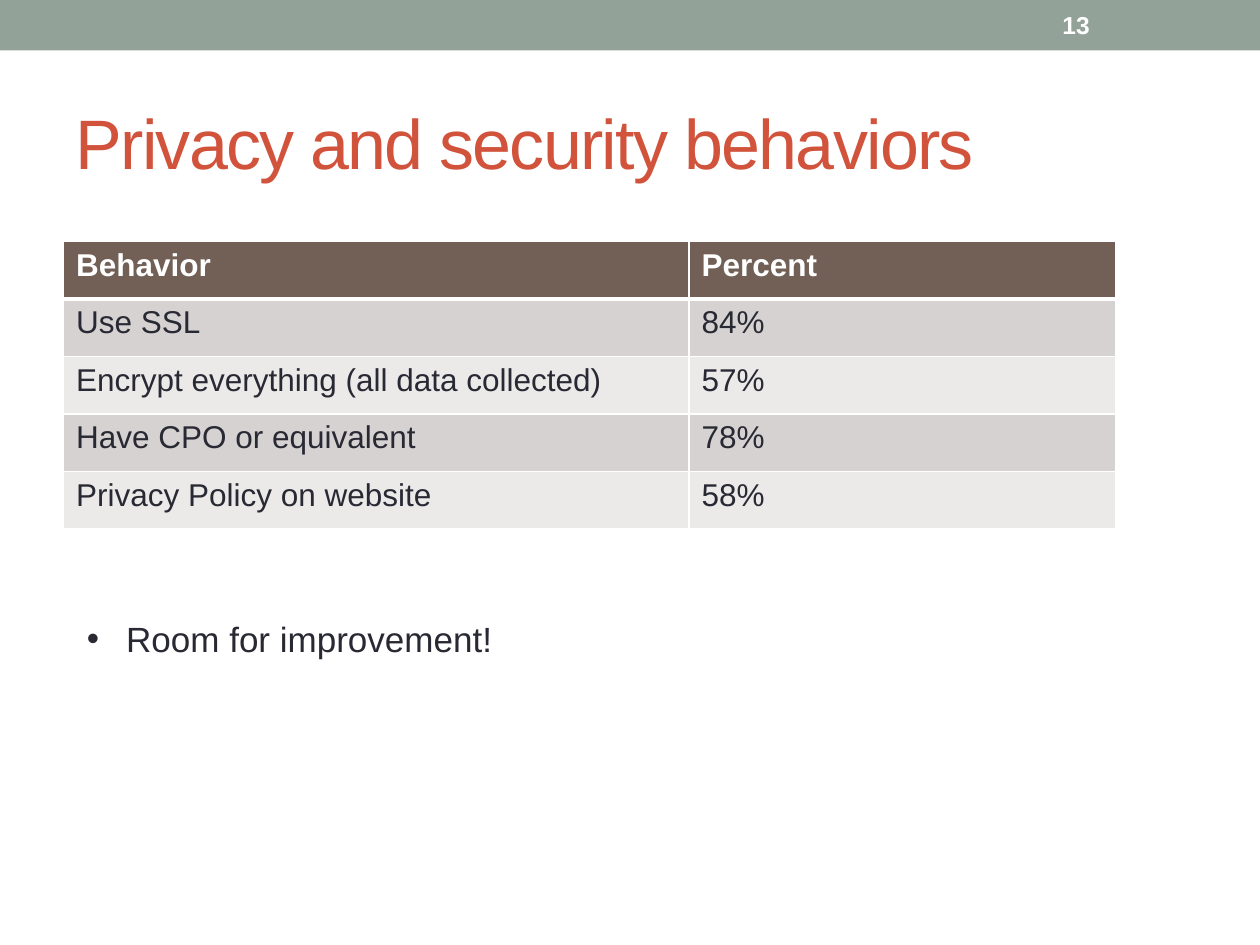
from pptx import Presentation
from pptx.dml.color import RGBColor
from pptx.enum.shapes import MSO_SHAPE
from pptx.enum.text import MSO_ANCHOR, MSO_AUTO_SIZE, PP_ALIGN
from pptx.oxml.ns import qn
from pptx.util import Pt
from lxml.etree import SubElement

SAGE = RGBColor(0x93, 0xA2, 0x99)
RED = RGBColor(0xD2, 0x53, 0x3C)
BROWN = RGBColor(0x72, 0x60, 0x56)
INK = RGBColor(0x29, 0x29, 0x34)
WHITE = RGBColor(0xFF, 0xFF, 0xFF)
BANDS = [RGBColor(0xD5, 0xD2, 0xD1), RGBColor(0xEB, 0xEA, 0xE9)]


class SlideBuilder:
    font = "Arial"

    def __init__(self, prs):
        self.s = prs.slides.add_slide(prs.slide_layouts[5])

    def run(self, p, text, size, color, bold=False):
        r = p.add_run()
        r.text = text
        r.font.name, r.font.size, r.font.bold = self.font, Pt(size), bold
        r.font.color.rgb = color
        return r

    def bar(self, x, y, w, h, color):
        sp = self.s.shapes.add_shape(MSO_SHAPE.RECTANGLE, Pt(x), Pt(y), Pt(w), Pt(h))
        sp.shadow.inherit = False
        sp.fill.solid()
        sp.fill.fore_color.rgb = color
        sp.line.fill.background()

    def title(self, text, x, y, w, h):
        sp = self.s.shapes.title
        sp.left, sp.top, sp.width, sp.height = Pt(x), Pt(y), Pt(w), Pt(h)
        tf = sp.text_frame
        tf.auto_size = MSO_AUTO_SIZE.NONE
        tf.vertical_anchor = MSO_ANCHOR.MIDDLE
        p = tf.paragraphs[0]
        p.alignment = PP_ALIGN.LEFT
        r = self.run(p, text, 40, RED)
        r.font._element.set("spc", "-100")

    def text(self, text, x, y, w, h, size, color, bold=False,
             anchor=MSO_ANCHOR.TOP, indent=0):
        tf = self.s.shapes.add_textbox(Pt(x), Pt(y), Pt(w), Pt(h)).text_frame
        tf.word_wrap = True
        tf.vertical_anchor = anchor
        p = tf.paragraphs[0]
        if indent:
            pPr = p._p.get_or_add_pPr()
            pPr.set("marL", str(Pt(indent)))
            pPr.set("indent", str(-Pt(indent)))
            SubElement(pPr, qn("a:buFont"), typeface=self.font)
            SubElement(pPr, qn("a:buChar"), char="•")
        self.run(p, text, size, color, bold)

    def borders(self, cell, **widths):
        tcPr = cell._tc.get_or_add_tcPr()
        for side in "LRTB":
            ln = SubElement(tcPr, qn(f"a:ln{side}"), w=str(Pt(widths.get(side, 1))))
            fill = SubElement(ln, qn("a:solidFill"))
            SubElement(fill, qn("a:srgbClr"), val=str(WHITE))

    def table(self, rows, x, y, widths, row_h):
        table = self.s.shapes.add_table(
            len(rows), len(widths), Pt(x), Pt(y),
            Pt(sum(widths)), Pt(row_h * len(rows))).table
        for col, width in zip(table.columns, widths):
            col.width = Pt(width)
        for i, row in enumerate(rows):
            table.rows[i].height = Pt(row_h)
            header = i == 0
            for j, value in enumerate(row):
                cell = table.cell(i, j)
                # The rule under the header is thicker than the grid
                self.borders(cell, B=3 if header else 1, T=3 if i == 1 else 1)
                cell.fill.solid()
                cell.fill.fore_color.rgb = BROWN if header else BANDS[(i - 1) % 2]
                self.run(cell.text_frame.paragraphs[0], value, 18,
                         WHITE if header else INK, header)


def main():
    prs = Presentation()
    prs.slide_width, prs.slide_height = Pt(720), Pt(540)
    b = SlideBuilder(prs)

    # Top band and slide number
    b.bar(0, 0, 720, 28.8, SAGE)
    b.text("13", 600, 1.44, 84, 25.92, 14, WHITE, bold=True, anchor=MSO_ANCHOR.MIDDLE)

    # Title
    b.title("Privacy and security behaviors", 36, 42, 648, 78)

    # Survey results
    b.table([
        ("Behavior", "Percent"),
        ("Use SSL", "84%"),
        ("Encrypt everything (all data collected)", "57%"),
        ("Have CPO or equivalent", "78%"),
        ("Privacy Policy on website", "58%"),
    ], 36.3, 138, (357.4, 243.6), 32.85)

    # Takeaway
    b.text("Room for improvement!", 42.5, 349.2, 300, 31.5, 20, INK, indent=22.5)

    prs.save("out.pptx")


if __name__ == "__main__":
    main()
